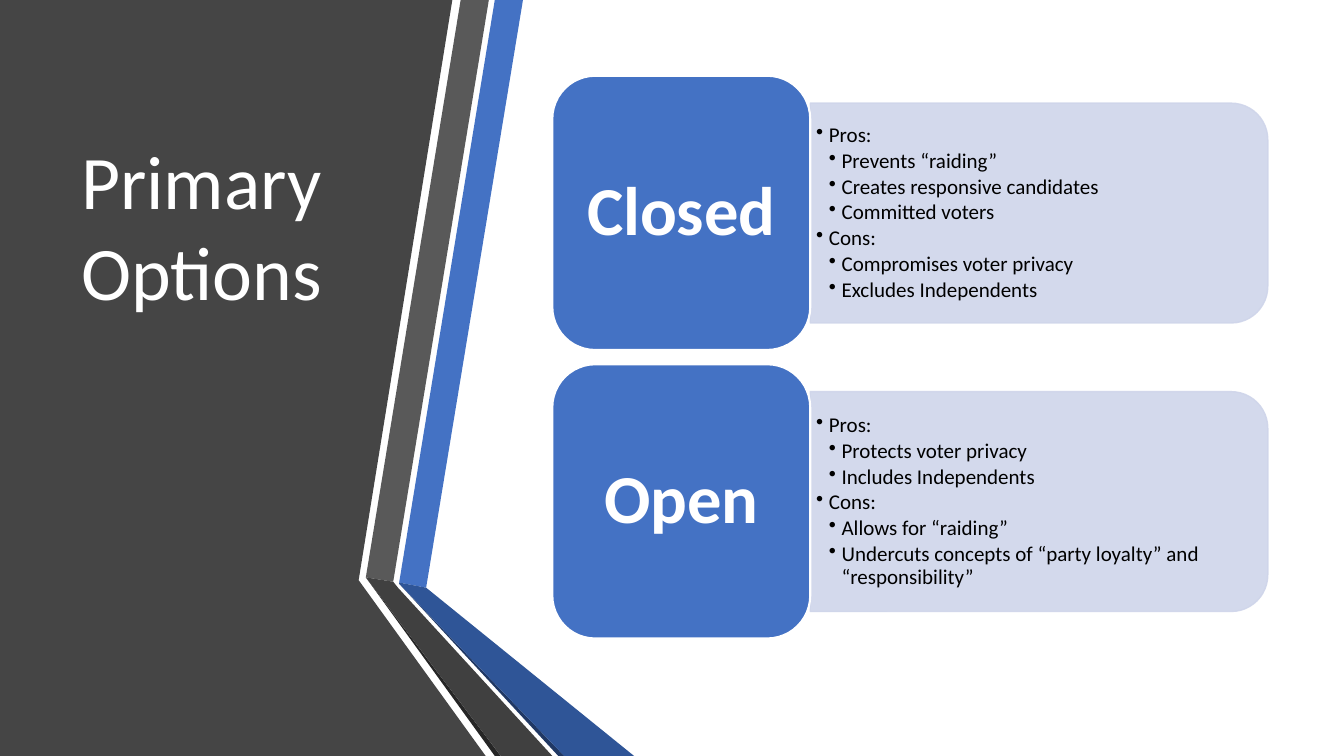
import dataclasses

import pptx
import pptx.dml.color
import pptx.enum.shapes
import pptx.enum.text
import pptx.oxml
import pptx.oxml.ns
import pptx.util

Cm = pptx.util.Cm
Pt = pptx.util.Pt
SHAPE = pptx.enum.shapes.MSO_SHAPE
ANCHOR = pptx.enum.text.MSO_ANCHOR
ALIGN = pptx.enum.text.PP_ALIGN


@dataclasses.dataclass(frozen=True)
class Theme:
    font: str = "Calibri"
    title_size: int = 54
    label_size: int = 49
    body_size: int = 15
    white: str = "FFFFFF"
    black: str = "000000"
    backdrop: str = "454545"
    accent: str = "4472C4"
    accent_dark: str = "2F5597"
    accent_edge: str = "203864"
    gray: str = "595959"
    gray_dark: str = "404040"
    gray_edge: str = "262626"
    panel: str = "CFD5EA"
    panel_opacity: int = 90


class SlideBuilder:
    def __init__(self, slide, theme):
        self.slide = slide
        self.theme = theme

    def paint(self, fill, color, opacity=100):
        fill.solid()
        fill.fore_color.rgb = pptx.dml.color.RGBColor.from_string(color)
        if opacity < 100:
            for element in fill._xPr.iter(pptx.oxml.ns.qn("a:srgbClr")):
                alpha = pptx.oxml.parse_xml(
                    f'<a:alpha {pptx.oxml.ns.nsdecls("a")} val="{opacity * 1000}"/>')
                element.append(alpha)

    def style_font(self, paragraph, size, color, bold=False):
        font = paragraph.font
        font.name = self.theme.font
        font.size = Pt(size)
        font.bold = bold
        font.color.rgb = pptx.dml.color.RGBColor.from_string(color)

    def set_frame(self, frame, anchor, horizontal, vertical):
        frame.word_wrap = True
        frame.vertical_anchor = anchor
        frame.margin_left = frame.margin_right = Cm(horizontal)
        frame.margin_top = frame.margin_bottom = Cm(vertical)

    def polygon(self, points, color):
        corners = [(Cm(x), Cm(y)) for x, y in points]
        builder = self.slide.shapes.build_freeform(*corners[0])
        builder.add_line_segments(corners[1:], close=True)
        shape = builder.convert_to_shape()
        shape.shadow.inherit = False
        self.paint(shape.fill, color)
        shape.line.fill.background()

    def title(self, text, left, top, width, height):
        frame = self.slide.shapes.add_textbox(
            Cm(left), Cm(top), Cm(width), Cm(height)).text_frame
        self.set_frame(frame, ANCHOR.TOP, 0.25, 0.13)
        frame.text = text
        self.style_font(frame.paragraphs[0], self.theme.title_size, self.theme.white)

    def panel(self, left, top, width, height):
        # Turned a quarter so that the rounded corners face right
        shift = (width - height) / 2
        shape = self.slide.shapes.add_shape(
            SHAPE.ROUND_2_SAME_RECTANGLE,
            Cm(left + shift), Cm(top - shift), Cm(height), Cm(width))
        shape.rotation = 90
        shape.shadow.inherit = False
        self.paint(shape.fill, self.theme.panel, self.theme.panel_opacity)
        self.paint(shape.line.fill, self.theme.panel, self.theme.panel_opacity)
        shape.line.width = Pt(1)

    def tile(self, text, left, top, width, height):
        shape = self.slide.shapes.add_shape(
            SHAPE.ROUNDED_RECTANGLE, Cm(left), Cm(top), Cm(width), Cm(height))
        shape.shadow.inherit = False
        self.paint(shape.fill, self.theme.accent)
        self.paint(shape.line.fill, self.theme.white)
        shape.line.width = Pt(1.5)
        self.set_frame(shape.text_frame, ANCHOR.MIDDLE, 0.5, 0.25)
        shape.text_frame.text = text
        paragraph = shape.text_frame.paragraphs[0]
        paragraph.alignment = ALIGN.CENTER
        paragraph.line_spacing = 0.9
        self.style_font(paragraph, self.theme.label_size, self.theme.white, bold=True)

    def bullets(self, items, left, top, width, height):
        frame = self.slide.shapes.add_textbox(
            Cm(left), Cm(top), Cm(width), Cm(height)).text_frame
        self.set_frame(frame, ANCHOR.MIDDLE, 0.15, 0.08)
        frame.text = "\n".join(text for level, text in items)
        for paragraph, (level, text) in zip(frame.paragraphs, items):
            paragraph.level = level
            paragraph.line_spacing = 0.9
            paragraph.space_after = Pt(2.25)
            properties = paragraph._p.get_or_add_pPr()
            properties.set("marL", str(Cm(0.32 * level)))
            properties.set("marL", str(Cm(0.32 * (level + 1))))
            properties.set("indent", str(-Cm(0.32)))
            properties.append(pptx.oxml.parse_xml(
                f'<a:buChar {pptx.oxml.ns.nsdecls("a")} char="•"/>'))
            self.style_font(paragraph, self.theme.body_size, self.theme.black)


def outline(pros, cons):
    """Put both lists under their headings as (level, text) pairs."""
    return ([(0, "Pros:")] + [(1, text) for text in pros]
            + [(0, "Cons:")] + [(1, text) for text in cons])


def main():
    presentation = pptx.Presentation()
    presentation.slide_width = Cm(33.87)
    presentation.slide_height = Cm(19.05)
    theme = Theme()
    builder = SlideBuilder(
        presentation.slides.add_slide(presentation.slide_layouts[6]), theme)

    # Dark backdrop and folded ribbons
    bottom = 19.05
    ribbons = [
        (theme.backdrop, [(0, 0), (11.4, 0), (9.04, 14.62), (12.24, bottom), (0, bottom)]),
        (theme.accent, [(10.06, 14.68), (10.74, 14.81), (13.18, 0), (12.47, 0)]),
        (theme.gray, [(12.32, 0), (11.61, 0), (9.22, 14.55), (9.91, 14.66)]),
        (theme.gray_edge, [(9.22, 14.55), (12.47, bottom), (12.62, bottom)]),
        (theme.accent_edge, [(10.06, 14.71), (14.07, bottom), (14.22, bottom)]),
        (theme.accent_dark, [(10.06, 14.68), (10.06, 14.71), (14.22, bottom),
                             (15.98, bottom), (10.74, 14.81)]),
        (theme.gray_dark, [(13.92, bottom), (10.03, 14.81), (9.91, 14.66),
                           (9.22, 14.55), (12.62, bottom)]),
    ]
    for color, points in ribbons:
        builder.polygon(points, color)

    # One row for each kind of primary
    primaries = [
        ("Closed", outline(
            ["Prevents “raiding”", "Creates responsive candidates", "Committed voters"],
            ["Compromises voter privacy", "Excludes Independents"])),
        ("Open", outline(
            ["Protects voter privacy", "Includes Independents"],
            ["Allows for “raiding”",
             "Undercuts concepts of “party loyalty” and “responsibility”"])),
    ]
    for row, (label, items) in enumerate(primaries):
        top = 1.91 + 7.27 * row
        builder.panel(20.42, top + 0.69, 11.53, 5.54)
        builder.bullets(items, 20.42, top + 0.96, 11.28, 5)
        builder.tile(label, 13.92, top, 6.5, 6.91)

    # Title
    builder.title("Primary Options", 1.8, 3.25, 6.68, 4.88)

    presentation.save("out.pptx")


if __name__ == "__main__":
    main()
